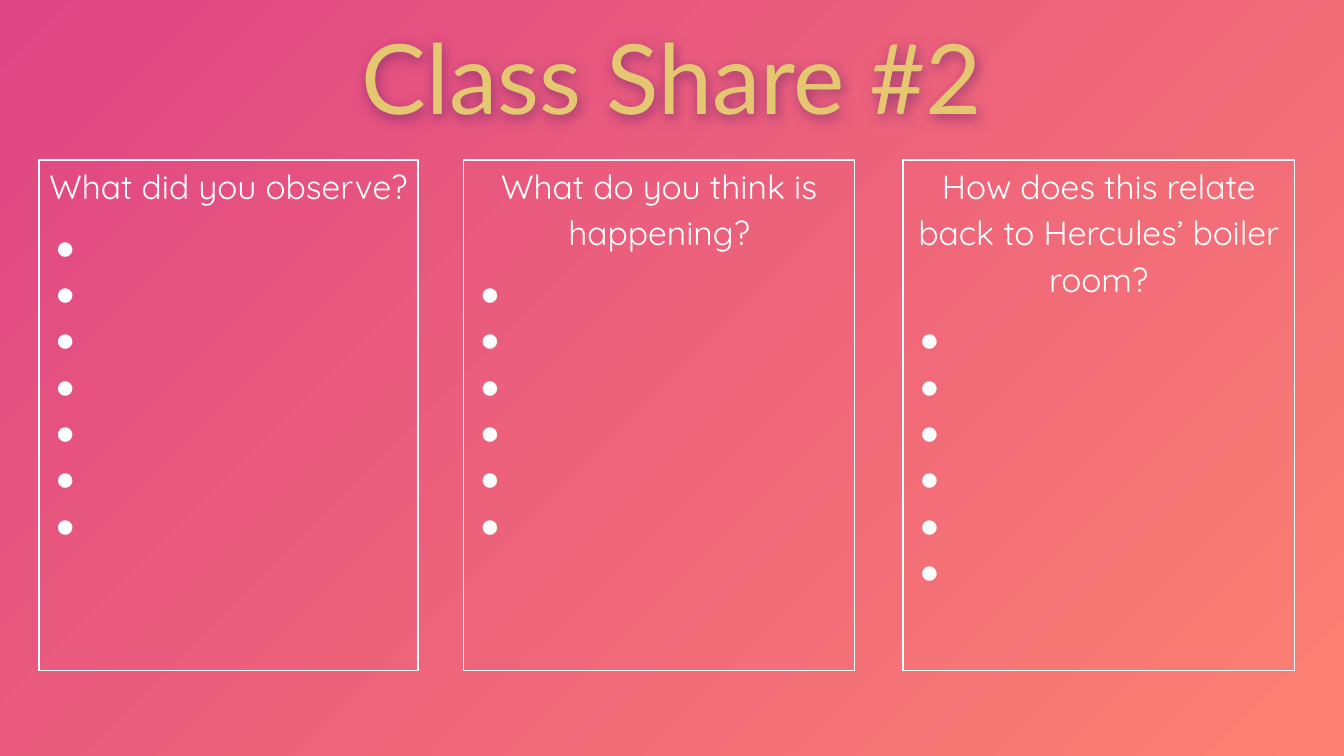
from lxml import etree
from pptx import Presentation, util as u
from pptx.dml.color import RGBColor
from pptx.enum import shapes, text
from pptx.oxml import parse_xml
from pptx.oxml.ns import nsdecls, qn

# Content: heading, number of bullets, left edge and width of each panel
TITLE = "Class Share #2"
PANELS = [
    ("What did you observe?", 7, 0.29, 2.82),
    ("What do you think is happening?", 6, 3.45, 2.91),
    ("How does this relate back to Hercules’ boiler room?", 6, 6.72, 2.91),
]

WHITE = RGBColor(0xFF, 0xFF, 0xFF)
GOLD = RGBColor(0xE5, 0xC7, 0x71)
CORAL = RGBColor(0xFC, 0x81, 0x72)
PINK = RGBColor(0xDF, 0x45, 0x84)
SHADE = RGBColor(0x4A, 0x14, 0x6A)

# Layout in inches, on a 16:9 slide
WIDE = 10
HIGH = WIDE * 9 / 16
TOP, TALL = 1.19, 3.8

HEAD = {"alignment": text.PP_ALIGN.CENTER, "line_spacing": 1.15}
ITEM = {"alignment": text.PP_ALIGN.LEFT, "line_spacing": 1.15}
FRAME = {"margin_left": 0, "margin_top": 0, "margin_right": 0,
         "margin_bottom": 0, "word_wrap": True,
         "auto_size": text.MSO_AUTO_SIZE.NONE}


def assign(obj, vals):
    for key, val in vals.items():
        setattr(obj, key, val)


def write(par, words, form, font, size, color):
    assign(par, form)
    run = par.add_run()
    run.text = words
    assign(run.font, {"name": font, "size": u.Pt(size)})
    run.font.color.rgb = color


def bullet(par):
    props = par._p.get_or_add_pPr()
    props.set("marL", str(u.Inches(0.5)))
    props.set("indent", str(u.Inches(-0.38)))
    tint = etree.SubElement(props, qn("a:buClr"))
    etree.SubElement(tint, qn("a:srgbClr"), val=str(WHITE))
    etree.SubElement(props, qn("a:buFont"), typeface="Arial")
    etree.SubElement(props, qn("a:buChar"), char="●")


deck = Presentation()
deck.slide_width, deck.slide_height = u.Inches(WIDE), u.Inches(HIGH)
slide = deck.slides.add_slide(deck.slide_layouts[5])

# Background: gradient spreading from the lower right corner
fill = slide.background.fill
fill.gradient()
for stop, color in zip(fill.gradient_stops, (CORAL, PINK)):
    stop.color.rgb = color
lin = next(slide.background._cSld.iter(qn("a:lin")))
lin.getparent().replace(lin, parse_xml(
    f'<a:path {nsdecls("a")} path="circle">'
    '<a:fillToRect l="100000" t="100000"/></a:path>'))

# Title with a soft shadow
title = slide.shapes.title
assign(title, {"left": u.Inches(1.07), "top": u.Inches(0.22),
               "width": u.Inches(7.86), "height": u.Inches(0.79)})
assign(title.text_frame, FRAME)
title.text_frame.vertical_anchor = text.MSO_ANCHOR.BOTTOM
write(title.text_frame.paragraphs[0], TITLE,
      {**HEAD, "line_spacing": 0.9}, "Lato", 52, GOLD)
title._element.spPr.append(parse_xml(
    f'<a:effectLst {nsdecls("a")}>'
    '<a:outerShdw blurRad="85000" dist="19050" dir="5400000" algn="bl" '
    f'rotWithShape="0"><a:srgbClr val="{SHADE}"><a:alpha val="50000"/>'
    '</a:srgbClr></a:outerShdw></a:effectLst>'))

# Panels, each with a heading and open bullets
for head, count, left, width in PANELS:
    box = slide.shapes.add_shape(
        shapes.MSO_SHAPE.RECTANGLE,
        *map(u.Inches, (left, TOP, width, TALL)))
    box.shadow.inherit = False
    box.fill.background()
    box.line.color.rgb = WHITE
    box.line.width = u.Pt(0.75)
    frame = box.text_frame
    assign(frame, FRAME)
    frame.vertical_anchor = text.MSO_ANCHOR.TOP
    write(frame.paragraphs[0], head, HEAD, "Quicksand", 18, WHITE)
    for row in range(count):
        par = frame.add_paragraph()
        form = {**ITEM, "space_before": u.Pt(0 if row else 8)}
        write(par, " ", form, "Quicksand", 18, WHITE)
        bullet(par)

deck.save("out.pptx")
